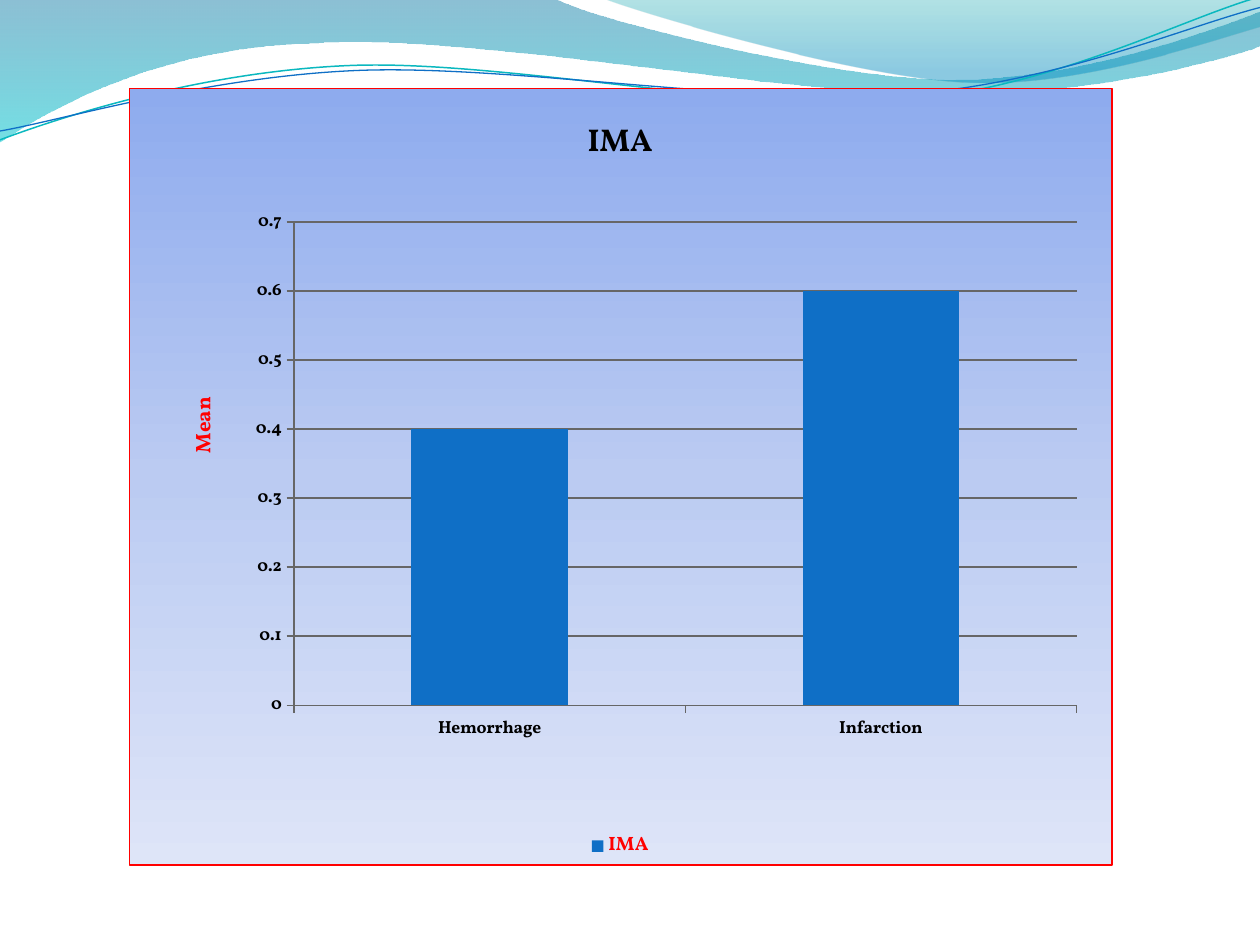
from math import cos, radians, sin

from lxml.etree import SubElement
from pptx import Presentation
from pptx.chart.data import CategoryChartData
from pptx.dml.color import RGBColor
from pptx.enum.chart import XL_CHART_TYPE, XL_LEGEND_POSITION, XL_TICK_MARK
from pptx.oxml import parse_xml
from pptx.oxml.ns import nsdecls, qn
from pptx.util import Inches, Pt

FACE = "Vollkorn"
TILT = -2.7
BANDS = [
    ([[(0, 0)], [(4.4, -0.01)], [(4.76, 0.17), (6.64, 0.63), (7.58, 0.63)],
      [(8.53, 0.63), (9.58, 0.26), (10, 0.09)], [(10.01, 0.36)],
      [(9.83, 0.44), (8.7, 0.76), (7.46, 0.75)],
      [(6.22, 0.75), (3.82, 0.28), (2.57, 0.34)],
      [(1.29, 0.36), (0.46, 0.83), (-0.01, 1.13)], [(0, 0)]],
     [(0, "0074A1", 45), (100, "00C6CF", 55)]),
    ([[(4.79, -0.01)], [(5.09, 0.11), (6.82, 0.62), (7.69, 0.65)],
      [(8.56, 0.69), (9.61, 0.32), (10, 0.21)], [(10, 0)], [(4.79, -0.01)]],
     [(0, "00A1A9", 30), (80, "008BBF", 45)]),
]
LINES = [
    ([[(0, 1.11)], [(0.48, 0.93), (1.58, 0.57), (2.77, 0.52)],
      [(3.95, 0.47), (5.93, 0.89), (7.13, 0.8)],
      [(8.33, 0.71), (9.38, 0.15), (9.98, -0.02)]],
     (4.99, 0.58), "0AB8BF", 0.85),
    ([[(0, 1.04)], [(0.47, 0.96), (1.64, 0.61), (2.83, 0.56)],
      [(4.03, 0.51), (5.97, 0.84), (7.17, 0.75)],
      [(8.36, 0.67), (9.41, 0.21), (10, 0.06)]],
     (5, 0.59), "0F6FC6", 0.75),
]


def tint(code):
    """Turn a hex string into a colour."""
    return RGBColor.from_string(code)


def dress(font, code, **form):
    """Give a font its colour, face and format values."""
    font.color.rgb = tint(code)
    for key, value in {"name": FACE, "bold": True, **form}.items():
        setattr(font, key, value)


def blend(stops):
    """Make a vertical gradient fill from (place, colour, opacity) stops."""
    fill = parse_xml(f'<a:gradFill {nsdecls("a")}><a:gsLst/>'
                     '<a:lin ang="5400000" scaled="0"/></a:gradFill>')
    for place, code, alpha in stops:
        stop = SubElement(fill[0], qn("a:gs"), pos=str(place * 1000))
        color = SubElement(stop, qn("a:srgbClr"), val=code)
        if alpha < 100:
            SubElement(color, qn("a:alpha"), val=str(alpha * 1000))
    return fill


def turn(steps, hub, angle):
    """Rotate the points of all steps clockwise about a hub."""
    c, s = cos(radians(angle)), sin(radians(angle))
    return [[(hub[0] + (x - hub[0]) * c - (y - hub[1]) * s,
              hub[1] + (x - hub[0]) * s + (y - hub[1]) * c) for x, y in step]
            for step in steps]


def draw(slide, steps, left, top, close):
    """Build a freeform whose three-point steps are cubic curves."""
    spots = [(Inches(left + x), Inches(top + y)) for step in steps for x, y in step]
    pen = slide.shapes.build_freeform(*spots[0])
    pen.add_line_segments(spots[1:], close=close)
    shape = pen.convert_to_shape()
    shape.shadow.inherit = False
    marks = iter(list(shape._element.iter(qn("a:lnTo"))))
    for step in steps[1:]:
        parts = [next(marks) for _ in step]
        if len(step) == 3:
            curve = parse_xml(f'<a:cubicBezTo {nsdecls("a")}/>')
            parts[0].addprevious(curve)
            for part in parts:
                curve.append(part[0])
                part.getparent().remove(part)
    return shape


def add_waves(slide, left, top):
    """Draw the wave bands and the two thin lines along the top."""
    for steps, stops in BANDS:
        band = draw(slide, steps, left, top, True)
        band.line.fill.background()
        band.line._ln.addprevious(blend(stops))
    for steps, hub, code, width in LINES:
        wave = draw(slide, turn(steps, hub, -TILT), left, top, False)
        wave.rotation = TILT
        wave.fill.background()
        wave.line.color.rgb = tint(code)
        wave.line.width = Pt(width)


def settle(parent, index, box, **spot):
    """Fix a chart part at inches measured within the chart box."""
    for old in parent.findall(qn("c:layout")):
        parent.remove(old)
    layout = parse_xml(f'<c:layout {nsdecls("c")}><c:manualLayout/></c:layout>')
    if "w" in spot:
        SubElement(layout[0], qn("c:layoutTarget"), val="inner")
    for key in ("x", "y"):
        SubElement(layout[0], qn(f"c:{key}Mode"), val="edge")
    for key, value in spot.items():
        whole = box[2] if key in "xw" else box[3]
        SubElement(layout[0], qn(f"c:{key}"), val=f"{Inches(value) / whole:.4f}")
    parent.insert(index, layout)


def label(title, text, code, size, box, x, y):
    """Write a chart or axis title and place it."""
    frame = title.text_frame
    frame.text = text
    dress(frame.paragraphs[0].runs[0].font, code, size=Pt(size))
    settle(title._element, 1, box, x=x, y=y)
    return frame


def add_panel(slide, left, top, width, height):
    """Add the column chart with its gradient panel."""
    data = CategoryChartData()
    data.categories = ["Hemorrhage", "Infarction"]
    data.add_series("IMA", [0.4, 0.6])
    box = [Inches(v) for v in (left, top, width, height)]
    chart = slide.shapes.add_chart(XL_CHART_TYPE.COLUMN_STACKED, *box, data).chart
    dress(chart.font, "000000", size=Pt(10), bold=False)

    chart.has_title = True
    label(chart.chart_title, "IMA", "000000", 18, box, 3.6, 0.18)
    chart.chart_title.include_in_layout = False
    value = chart.value_axis
    value.minimum_scale, value.maximum_scale, value.major_unit = 0, 0.7, 0.1
    mean = label(value.axis_title, "Mean", "FF0000", 12, box, 0.44, 2.42)
    mean._txBody.bodyPr.set("rot", "-5400000")
    mean._txBody.bodyPr.set("vert", "horz")
    value.has_major_gridlines = True
    rules = [value.major_gridlines.format.line]
    for axis in (value, chart.category_axis):
        axis.major_tick_mark = XL_TICK_MARK.OUTSIDE
        dress(axis.tick_labels.font, "000000", size=Pt(10))
        rules.append(axis.format.line)
    for rule in rules:
        rule.color.rgb = tint("666666")
        rule.width = Pt(0.75)

    chart.has_legend = True
    chart.legend.position = XL_LEGEND_POSITION.BOTTOM
    chart.legend.include_in_layout = False
    dress(chart.legend.font, "FF0000", size=Pt(11))
    plot = chart.plots[0]
    plot.gap_width, plot.overlap, plot.vary_by_categories = 150, 100, False
    fill = plot.series[0].format.fill
    fill.solid()
    fill.fore_color.rgb = tint("0F6FC6")

    core = chart._chartSpace.chart
    settle(core.plotArea, 0, box, x=1.31, y=1.06, w=6.22, h=3.84)
    look = parse_xml(f'<c:spPr {nsdecls("c", "a")}><a:ln w="9525"><a:solidFill>'
                     '<a:srgbClr val="FF0000"/></a:solidFill></a:ln></c:spPr>')
    look.insert(0, blend([(0, "8EABEE", 100), (50, "BBCBF2", 100), (100, "DEE5F8", 100)]))
    core.addnext(look)


def main():
    """Build the slide and save it."""
    deck = Presentation()
    deck.slide_width, deck.slide_height = Inches(10), Inches(7.5)
    slide = deck.slides.add_slide(deck.slide_layouts[6])
    add_waves(slide, 0, 0)
    add_panel(slide, 1.02, 0.7, 7.81, 6.17)
    deck.save("out.pptx")


if __name__ == "__main__":
    main()
